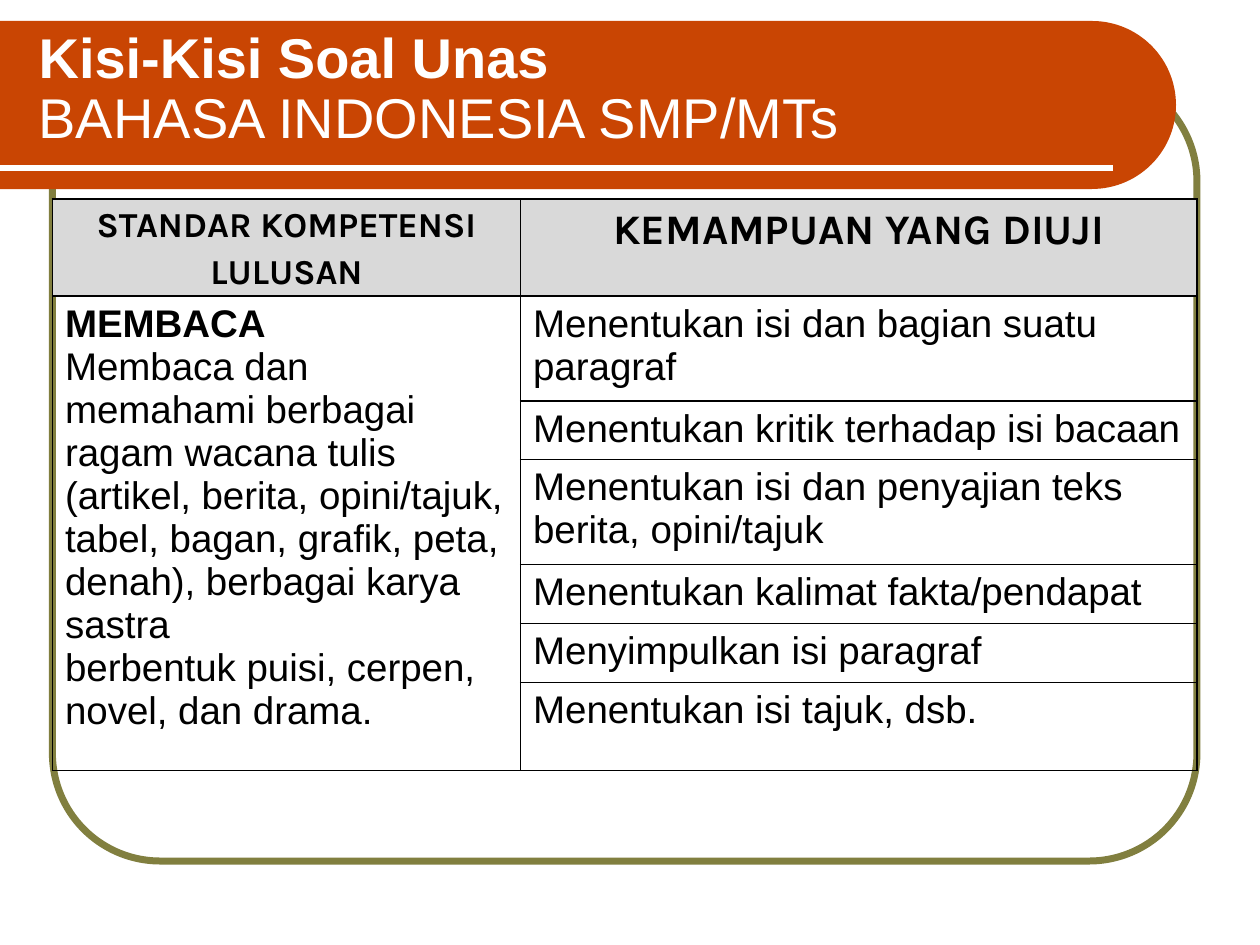
"""Build the exam outline slide: a banner title over a competency table."""
import math
from dataclasses import dataclass

import pptx
import pptx.dml.color
import pptx.enum.shapes
import pptx.enum.text
import pptx.oxml
import pptx.oxml.ns
import pptx.util

Pt = pptx.util.Pt


@dataclass(frozen=True)
class Theme:
    banner: str = "C94503"
    frame: str = "817F3F"
    header: str = "D9D9D9"
    light: str = "FFFFFF"
    dark: str = "000000"
    body_font: str = "Arial"
    header_font: str = "Karla"
    title_size: int = 32
    body_size: int = 22


theme = Theme()


def color(name):
    return pptx.dml.color.RGBColor.from_string(name)


def add_span(para, text, font, size, ink, bold):
    span = para.add_run()
    span.text = text
    span.font.name = font
    span.font.size = Pt(size)
    span.font.bold = bold
    span.font.color.rgb = color(ink)


deck = pptx.Presentation()
deck.slide_width, deck.slide_height = Pt(720), Pt(540)
page = deck.slides.add_slide(deck.slide_layouts[6])

frame = page.shapes.add_shape(
    pptx.enum.shapes.MSO_SHAPE.ROUNDED_RECTANGLE, Pt(30), Pt(42), Pt(654), Pt(450))
frame.adjustments[0] = 0.137
frame.shadow.inherit = False
frame.fill.background()
frame.line.color.rgb = color(theme.frame)
frame.line.width = Pt(4)

radius, center_x, center_y = 48, 624, 60
arc = [(center_x + radius * math.cos(math.radians(angle)),
        center_y + radius * math.sin(math.radians(angle)))
       for angle in range(-90, 91, 3)]
outline = page.shapes.build_freeform(0, Pt(center_y - radius))
outline.add_line_segments(
    [(Pt(x), Pt(y)) for x, y in arc] + [(0, Pt(center_y + radius))], close=True)
banner = outline.convert_to_shape()
banner.shadow.inherit = False
banner.fill.solid()
banner.fill.fore_color.rgb = color(theme.banner)
banner.line.fill.background()

rule = page.shapes.add_connector(
    pptx.enum.shapes.MSO_CONNECTOR.STRAIGHT, 0, Pt(96), Pt(636), Pt(96))
rule.line.color.rgb = color(theme.light)
rule.line.width = Pt(3)
rule._element.spPr.append(pptx.oxml.parse_xml(
    f'<a:effectLst {pptx.oxml.ns.nsdecls("a")}/>'))

title = page.shapes.add_textbox(Pt(15), Pt(18), Pt(631.5), Pt(72)).text_frame
title.word_wrap = True
title.vertical_anchor = pptx.enum.text.MSO_ANCHOR.MIDDLE
title.margin_bottom = Pt(8)
para = title.paragraphs[0]
para.line_spacing = 0.89
add_span(para, "Kisi-Kisi Soal Unas", theme.body_font, theme.title_size, theme.light, True)
para.add_line_break()
add_span(para, "BAHASA INDONESIA SMP/MTs", theme.body_font, theme.title_size, theme.light, False)

headers = [("STANDAR KOMPETENSI LULUSAN", 20), ("KEMAMPUAN YANG DIUJI", 24)]
standard = [
    ("MEMBACA", True),
    ("Membaca dan memahami berbagai ragam wacana tulis (artikel, berita, "
     "opini/tajuk, tabel, bagan, grafik, peta, denah), berbagai karya sastra", False),
    ("berbentuk puisi, cerpen, novel, dan drama.", False),
]
abilities = [
    "Menentukan isi dan bagian suatu paragraf",
    "Menentukan kritik terhadap isi bacaan",
    "Menentukan isi dan penyajian teks berita, opini/tajuk",
    "Menentukan kalimat fakta/pendapat",
    "Menyimpulkan isi paragraf",
    "Menentukan isi tajuk, dsb.",
]
row_heights = [53.7, 56.6, 31.8, 56.6, 31.8, 31.8, 45]

grid = page.shapes.add_table(
    len(row_heights), 2, Pt(30), Pt(113.8), Pt(654), Pt(sum(row_heights))).table
for column, width in zip(grid.columns, (267.5, 386.5)):
    column.width = Pt(width)
for row, height in zip(grid.rows, row_heights):
    row.height = Pt(height)
grid.cell(1, 0).merge(grid.cell(len(abilities), 0))

for cell in grid.iter_cells():
    properties = cell._tc.get_or_add_tcPr()
    for side in "LRTB":
        properties.append(pptx.oxml.parse_xml(
            f'<a:ln{side} {pptx.oxml.ns.nsdecls("a")} w="{Pt(1)}"><a:solidFill>'
            f'<a:srgbClr val="{theme.dark}"/></a:solidFill></a:ln{side}>'))
    cell.fill.background()

for column, (text, size) in enumerate(headers):
    cell = grid.cell(0, column)
    cell.fill.solid()
    cell.fill.fore_color.rgb = color(theme.header)
    cell.margin_left = cell.margin_right = Pt(5)
    cell.margin_top = cell.margin_bottom = 0
    para = cell.text_frame.paragraphs[0]
    para.alignment = pptx.enum.text.PP_ALIGN.CENTER
    para.line_spacing = 1.15
    add_span(para, text, theme.header_font, size, theme.dark, True)

body = [(grid.cell(1, 0), standard)]
body += [(grid.cell(row, 1), [(text, False)]) for row, text in enumerate(abilities, 1)]
for cell, lines in body:
    for index, (text, bold) in enumerate(lines):
        para = cell.text_frame.add_paragraph() if index else cell.text_frame.paragraphs[0]
        add_span(para, text, theme.body_font, theme.body_size, theme.dark, bold)

deck.save("out.pptx")
